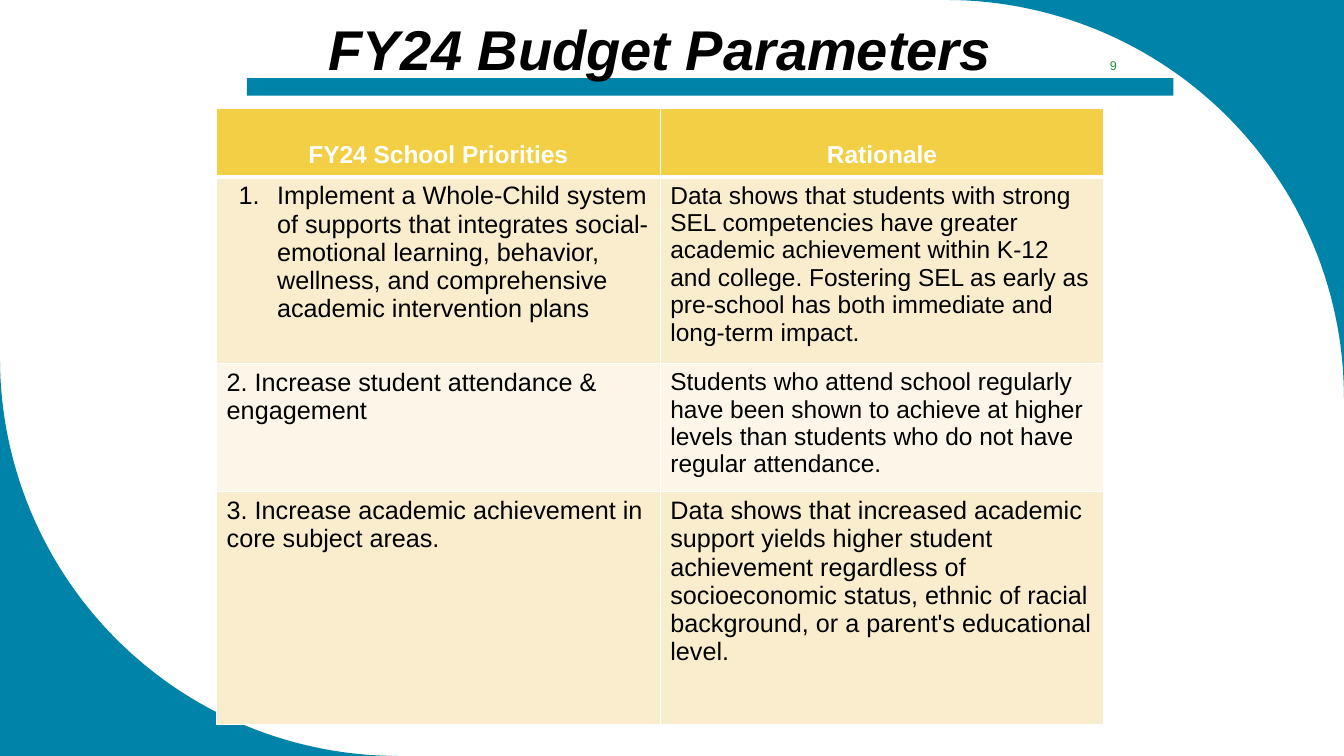
"""Build the FY24 budget parameters slide."""
from dataclasses import dataclass
from math import cos, pi, sin

from lxml.etree import SubElement
from pptx import Presentation
from pptx.dml.color import RGBColor
from pptx.enum.shapes import MSO_SHAPE
from pptx.enum.text import MSO_ANCHOR, PP_ALIGN
from pptx.oxml.ns import qn
from pptx.util import Cm, Pt


@dataclass(frozen=True)
class Theme:
    font: str = "Arial"
    teal: str = "0083A9"
    gold: str = "F3CF45"
    sand: str = "FAEDCE"
    cream: str = "FDF6E8"
    white: str = "FFFFFF"
    black: str = "000000"
    green: str = "159839"
    title: float = 40
    priority: float = 18
    body: float = 17.5
    number: float = 9


T = Theme()


def write(tf, text, size=T.body, color=T.black, bold=False, italic=False,
          align=PP_ALIGN.LEFT, anchor=MSO_ANCHOR.TOP):
    tf.word_wrap = True
    tf.vertical_anchor = anchor
    p = tf.paragraphs[0]
    p.alignment = align
    r = p.add_run()
    r.text = text
    r.font.name = T.font
    r.font.size = Pt(size)
    r.font.bold = bold
    r.font.italic = italic
    r.font.color.rgb = RGBColor.from_string(color)
    return p


def paint(sp, color):
    sp.shadow.inherit = False
    sp.fill.solid()
    sp.fill.fore_color.rgb = RGBColor.from_string(color)
    sp.line.fill.background()


prs = Presentation()
prs.slide_width, prs.slide_height = Cm(33.87), Cm(19.05)
s = prs.slides.add_slide(prs.slide_layouts[5])

radius, steps = 10.03, 60
for cx, cy, sign in ((23.84, radius, 1), (radius, 9.02, -1)):
    arc = [(Cm(cx + sign * radius * sin(a)), Cm(cy - sign * radius * cos(a)))
           for a in (pi / 2 * i / steps for i in range(steps + 1))]
    corner = (Cm(cx + sign * radius), Cm(cy - sign * radius))
    fb = s.shapes.build_freeform(*corner)
    fb.add_line_segments(arc, close=True)
    paint(fb.convert_to_shape(), T.teal)

bar = s.shapes.add_shape(MSO_SHAPE.RECTANGLE, Cm(6.22), Cm(1.97), Cm(23.35), Cm(0.44))
paint(bar, T.teal)

title = s.shapes.title
title.left, title.top, title.width, title.height = Cm(7.75), Cm(0.23), Cm(17.75), Cm(1.96)
write(title.text_frame, "FY24 Budget Parameters", size=T.title, bold=True, italic=True,
      align=PP_ALIGN.CENTER, anchor=MSO_ANCHOR.MIDDLE)
title.element.getparent().append(title.element)

rows = [
    ("FY24 School Priorities", "Rationale"),
    ("Implement a Whole-Child system of supports that integrates social-emotional learning, "
     "behavior, wellness, and comprehensive academic intervention plans",
     "Data shows that students with strong SEL competencies have greater academic achievement "
     "within K-12 and college. Fostering SEL as early as pre-school has both immediate and "
     "long-term impact."),
    ("2. Increase student attendance & engagement",
     "Students who attend school regularly have been shown to achieve at higher levels than "
     "students who do not have regular attendance."),
    ("3. Increase academic achievement in core subject areas.",
     "Data shows that increased academic support yields higher student achievement regardless "
     "of socioeconomic status, ethnic of racial background, or a parent's educational level."),
]
heights = (1.72, 4.7, 3.23, 5.87)
fills = (T.gold, T.sand, T.cream, T.sand)
sizes = ((T.body, T.body), (T.priority, T.body), (T.priority, T.body), (T.priority, T.priority))

table = s.shapes.add_table(len(rows), 2, Cm(5.46), Cm(2.74), Cm(22.36), Cm(sum(heights))).table
table.horz_banding = False
for i, texts in enumerate(rows):
    table.rows[i].height = Cm(heights[i])
    for j, text in enumerate(texts):
        cell = table.cell(i, j)
        tcPr = cell._tc.get_or_add_tcPr()
        for side in "LRTB":
            thick = (i, side) in ((0, "B"), (1, "T"))
            ln = SubElement(tcPr, qn(f"a:ln{side}"), w=str(Pt(3 if thick else 1)))
            SubElement(SubElement(ln, qn("a:solidFill")), qn("a:srgbClr"), val=T.white)
        cell.fill.solid()
        cell.fill.fore_color.rgb = RGBColor.from_string(fills[i])
        if i == 0:
            cell.margin_top = Cm(0.81)
            write(cell.text_frame, text, color=T.white, bold=True, align=PP_ALIGN.CENTER)
        else:
            write(cell.text_frame, text, size=sizes[i][j])

pPr = table.cell(1, 0).text_frame.paragraphs[0]._p.get_or_add_pPr()
pPr.set("marL", str(Cm(1.27)))
pPr.set("indent", str(Cm(-0.97)))
SubElement(SubElement(pPr, qn("a:buClr")), qn("a:srgbClr"), val=T.black)
SubElement(pPr, qn("a:buFont"), typeface=T.font)
SubElement(pPr, qn("a:buAutoNum"), type="arabicPeriod")

number = s.shapes.add_textbox(Cm(27.03), Cm(1.27), Cm(2.06), Cm(0.76))
write(number.text_frame, "9", size=T.number, color=T.green, align=PP_ALIGN.CENTER,
      anchor=MSO_ANCHOR.MIDDLE)

prs.save("out.pptx")
